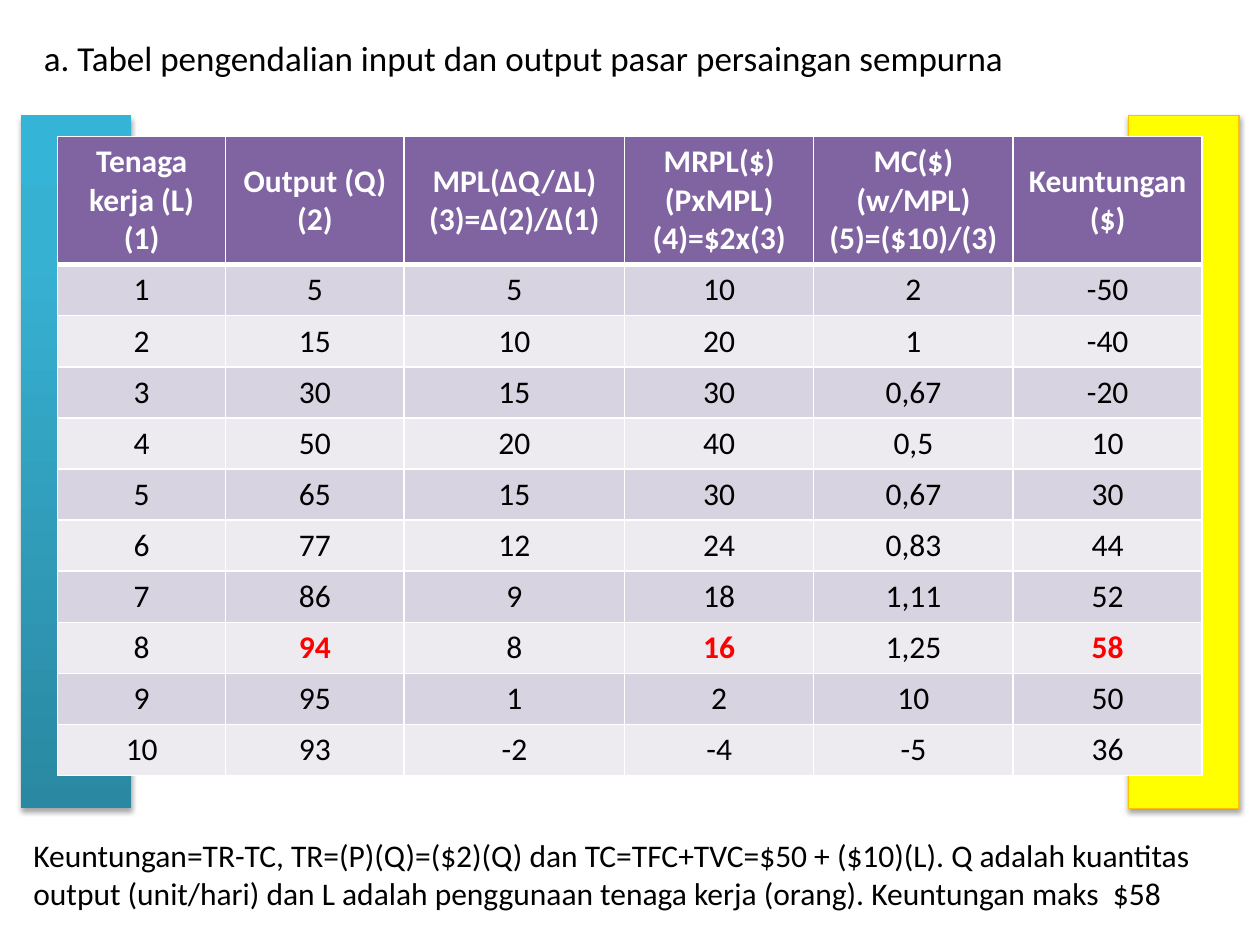
import pptx
import pptx.dml.color
import pptx.enum.shapes
import pptx.enum.text
import pptx.oxml
import pptx.oxml.ns
import pptx.util
from lxml import etree

Pt = pptx.util.Pt
ALIGN = pptx.enum.text.PP_ALIGN
ANCHOR = pptx.enum.text.MSO_ANCHOR
qn = pptx.oxml.ns.qn

# Content
HEADING = "a. Tabel pengendalian input dan output pasar persaingan sempurna"
HEADERS = [
    "Tenaga kerja (L)\n(1)",
    "Output (Q)\n(2)",
    "MPL(ΔQ/ΔL)\n(3)=Δ(2)/Δ(1)",
    "MRPL($)\n(PxMPL)\n(4)=$2x(3)",
    "MC($)\n(w/MPL)\n(5)=($10)/(3)",
    "Keuntungan\n($)",
]
ROWS = [
    (1, 5, 5, 10, "2", -50),
    (2, 15, 10, 20, "1", -40),
    (3, 30, 15, 30, "0,67", -20),
    (4, 50, 20, 40, "0,5", 10),
    (5, 65, 15, 30, "0,67", 30),
    (6, 77, 12, 24, "0,83", 44),
    (7, 86, 9, 18, "1,11", 52),
    (8, 94, 8, 16, "1,25", 58),
    (9, 95, 1, 2, "10", 50),
    (10, 93, -2, -4, "-5", 36),
]
MAXIMUM_PROFIT = {(8, 1), (8, 3), (8, 5)}  # table row, column
EXPLANATION = (
    "Keuntungan=TR-TC, TR=(P)(Q)=($2)(Q) dan TC=TFC+TVC=$50 + ($10)(L). "
    "Q adalah kuantitas output (unit/hari) dan L adalah penggunaan tenaga kerja (orang). "
    "Keuntungan maks  $58"
)

THEME = {
    "font": "Calibri", "heading_size": 20, "body_size": 18,
    "text": "000000", "header_text": "FFFFFF", "highlight": "FF0000",
    "header": "8064A2", "bands": ["EDEAF0", "D8D3E0"], "border": "FFFFFF",
    "right_bar": "FFFF00", "right_bar_line": "FFC000", "shadow": "000000",
    "left_bar": [(0, "2A88A2"), (80, "37B1D2"), (100, "34B4D6")],
}

# Layout, in points
SLIDE_W, SLIDE_H = 720, 540
COLUMN_WIDTHS = [96, 102, 126, 108, 114, 108]
HEADER_H, ROW_H = 73.2, 29.2
TABLE_LEFT, TABLE_TOP = 33, 78
BAR_TOP, BAR_W, BAR_H = 66, 63, 396
LEFT_BAR_X, RIGHT_BAR_X = 12, 645


def rgb(code):
    return pptx.dml.color.RGBColor.from_string(code)


def style(frame, color, size=THEME["body_size"], bold=False, align=ALIGN.LEFT):
    for paragraph in frame.paragraphs:
        paragraph.alignment = align
        for run in paragraph.runs:
            run.font.name = THEME["font"]
            run.font.size = Pt(size)
            run.font.bold = bold
            run.font.color.rgb = rgb(color)


def add_text(slide, text, box, size, anchor):
    frame = slide.shapes.add_textbox(*map(Pt, box)).text_frame
    frame.word_wrap = True
    frame.vertical_anchor = anchor
    frame.text = text
    style(frame, THEME["text"], size)


def color_child(parent, code):
    return etree.SubElement(parent, qn("a:srgbClr"), val=code)


def add_bar(slide, left):
    bar = slide.shapes.add_shape(
        pptx.enum.shapes.MSO_SHAPE.RECTANGLE, Pt(left), Pt(BAR_TOP), Pt(BAR_W), Pt(BAR_H))
    bar.shadow.inherit = False
    effects = bar.element.spPr.find(qn("a:effectLst"))
    shadow = etree.SubElement(
        effects, qn("a:outerShdw"), blurRad=str(Pt(3.1)), dist=str(Pt(1.8)),
        dir="5400000", rotWithShape="0")
    etree.SubElement(color_child(shadow, THEME["shadow"]), qn("a:alpha"), val="35000")
    return bar


def set_gradient(shape, stops):
    shape.fill.gradient()
    shape.fill.gradient_angle = 90
    stop_list = shape.element.spPr.find(qn("a:gradFill")).find(qn("a:gsLst"))
    for stop in list(stop_list):
        stop_list.remove(stop)
    for position, code in stops:
        color_child(etree.SubElement(stop_list, qn("a:gs"), pos=str(position * 1000)), code)


def set_borders(cell, top, bottom):
    properties = cell._tc.get_or_add_tcPr()
    sides = [("a:lnL", 1), ("a:lnR", 1), ("a:lnT", top), ("a:lnB", bottom)]
    for index, (side, width) in enumerate(sides):
        line = etree.SubElement(properties, qn(side), w=str(Pt(width)))
        color_child(etree.SubElement(line, qn("a:solidFill")), THEME["border"])
        properties.insert(index, line)


def add_input_output_table(slide):
    contents = [HEADERS] + ROWS
    height = HEADER_H + ROW_H * len(ROWS)
    table = slide.shapes.add_table(
        len(contents), len(HEADERS), Pt(TABLE_LEFT), Pt(TABLE_TOP),
        Pt(sum(COLUMN_WIDTHS)), Pt(height)).table
    for column, width in zip(table.columns, COLUMN_WIDTHS):
        column.width = Pt(width)
    for r, values in enumerate(contents):
        is_header = r == 0
        table.rows[r].height = Pt(HEADER_H if is_header else ROW_H)
        for c, value in enumerate(values):
            cell = table.cell(r, c)
            cell.text_frame.text = str(value)
            cell.vertical_anchor = ANCHOR.MIDDLE if is_header else ANCHOR.TOP
            is_maximum = (r, c) in MAXIMUM_PROFIT
            color = "header_text" if is_header else "highlight" if is_maximum else "text"
            style(cell.text_frame, THEME[color], bold=is_header or is_maximum,
                  align=ALIGN.CENTER)
            cell.fill.solid()
            cell.fill.fore_color.rgb = rgb(THEME["header"] if is_header else THEME["bands"][r % 2])
            set_borders(cell, top=3 if r == 1 else 1, bottom=3 if is_header else 1)


def main():
    deck = pptx.Presentation()
    deck.slide_width, deck.slide_height = Pt(SLIDE_W), Pt(SLIDE_H)
    slide = deck.slides.add_slide(deck.slide_layouts[6])

    # Side bars behind the table
    right_bar = add_bar(slide, RIGHT_BAR_X)
    right_bar.fill.solid()
    right_bar.fill.fore_color.rgb = rgb(THEME["right_bar"])
    right_bar.line.color.rgb = rgb(THEME["right_bar_line"])
    right_bar.line.width = Pt(0.75)
    left_bar = add_bar(slide, LEFT_BAR_X)
    set_gradient(left_bar, THEME["left_bar"])
    left_bar.line.fill.background()

    # Heading, table and explanation
    add_text(slide, HEADING, (18, 6, 582, 54), THEME["heading_size"], ANCHOR.MIDDLE)
    add_input_output_table(slide)
    add_text(slide, EXPLANATION, (12, 474, 696, 51), THEME["body_size"], ANCHOR.TOP)

    deck.save("out.pptx")


if __name__ == "__main__":
    main()
